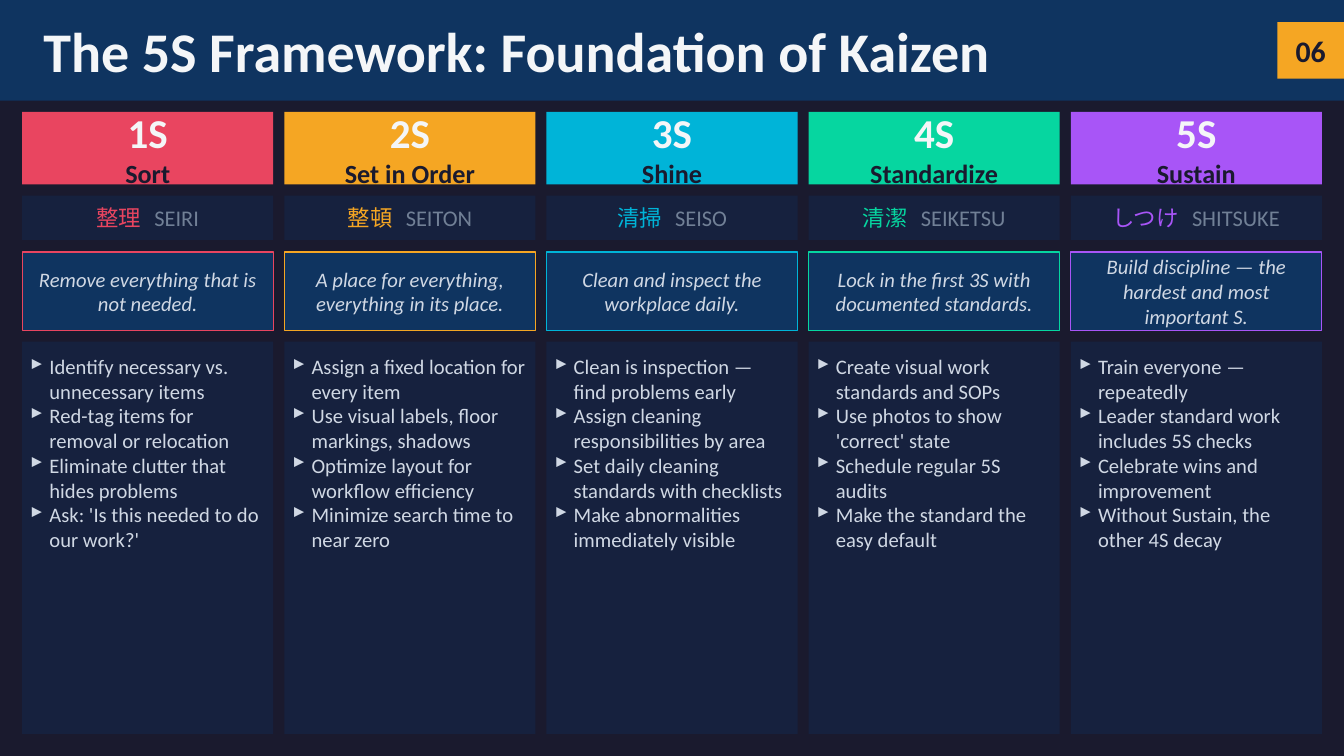
from lxml.etree import SubElement
from pptx import Presentation
from pptx.dml.color import RGBColor
from pptx.enum.shapes import MSO_SHAPE as SHAPE
from pptx.enum.text import MSO_ANCHOR as ANCHOR, MSO_AUTO_SIZE as AUTO, PP_ALIGN as ALIGN
from pptx.oxml.ns import qn
from pptx.util import Inches, Pt

COLORS = {
    "night": "1A1A2E", "navy": "0F3460", "panel": "16213E",
    "white": "F4F6F8", "text": "D0D8E4", "muted": "718096",
    "red": "E94560", "amber": "F5A623", "cyan": "00B4D8",
    "green": "06D6A0", "purple": "A855F7",
}
FORMATS = {
    "title": {"size": Pt(40), "bold": True},
    "badge": {"size": Pt(21.3), "bold": True},
    "code": {"size": Pt(29.3), "bold": True},
    "name": {"size": Pt(18.7), "bold": True},
    "japanese": {"size": Pt(16)},
    "motto": {"size": Pt(14.7), "italic": True},
    "action": {"size": Pt(14.7)},
}
SLIDE_W, SLIDE_H = 13.33, 7.5
MARGIN, GAP = 0.22, 0.11
HEADER_H = 1
CARD_INSETS = {"margin_left": 0.08, "margin_right": 0.08}
LIST_INSETS = {**CARD_INSETS, "margin_top": 0.12}

PILLARS = [
    ("Sort", "整理", "SEIRI", "red", "Remove everything that is not needed.",
     ["Identify necessary vs. unnecessary items",
      "Red-tag items for removal or relocation",
      "Eliminate clutter that hides problems",
      "Ask: 'Is this needed to do our work?'"]),
    ("Set in Order", "整頓", "SEITON", "amber",
     "A place for everything, everything in its place.",
     ["Assign a fixed location for every item",
      "Use visual labels, floor markings, shadows",
      "Optimize layout for workflow efficiency",
      "Minimize search time to near zero"]),
    ("Shine", "清掃", "SEISO", "cyan", "Clean and inspect the workplace daily.",
     ["Clean is inspection — find problems early",
      "Assign cleaning responsibilities by area",
      "Set daily cleaning standards with checklists",
      "Make abnormalities immediately visible"]),
    ("Standardize", "清潔", "SEIKETSU", "green",
     "Lock in the first 3S with documented standards.",
     ["Create visual work standards and SOPs",
      "Use photos to show 'correct' state",
      "Schedule regular 5S audits",
      "Make the standard the easy default"]),
    ("Sustain", "しつけ", "SHITSUKE", "purple",
     "Build discipline — the hardest and most important S.",
     ["Train everyone — repeatedly",
      "Leader standard work includes 5S checks",
      "Celebrate wins and improvement",
      "Without Sustain, the other 4S decay"]),
]


def rgb(color):
    return RGBColor.from_string(COLORS[color])


def add_box(slide, x, y, w, h, fill, line=None, insets=None):
    s = slide.shapes.add_shape(SHAPE.RECTANGLE, Inches(x), Inches(y), Inches(w), Inches(h))
    s.shadow.inherit = False
    s.fill.solid()
    s.fill.fore_color.rgb = rgb(fill)
    if line:
        s.line.color.rgb = rgb(line)
        s.line.width = Pt(0.75)
    else:
        s.line.fill.background()
    tf = s.text_frame
    tf.word_wrap = True
    tf.vertical_anchor = ANCHOR.MIDDLE
    for side, inset in (insets or {}).items():
        setattr(tf, side, Inches(inset))
    return s


def add_run(p, text, style, color):
    r = p.add_run()
    r.text = text
    r.font.name = "Calibri"
    r.font.color.rgb = rgb(color)
    for key, value in FORMATS[style].items():
        setattr(r.font, key, value)
    return r


def add_lines(tf, lines, align=ALIGN.CENTER):
    """Write one paragraph per (text, style, color) line."""
    for i, line in enumerate(lines):
        p = tf.paragraphs[0] if i == 0 else tf.add_paragraph()
        p.alignment = align
        add_run(p, *line)


def add_bullet(p):
    pPr = p._p.get_or_add_pPr()
    pPr.set("marL", str(Inches(0.19)))
    pPr.set("indent", str(-Inches(0.19)))
    SubElement(pPr, qn("a:buChar")).set("char", "▸")


def add_header(slide, title, number, x, y, w, h):
    add_box(slide, x, y, w, h, "navy")
    s = slide.shapes.title
    slide.shapes._spTree.append(s._element)  # bring the title in front of its bar
    s.left, s.top = Inches(x + 0.33), Inches(y + 0.11)
    s.width, s.height = Inches(11.11), Inches(h - 0.22)
    tf = s.text_frame
    tf.word_wrap = True
    tf.auto_size = AUTO.NONE
    tf.vertical_anchor = ANCHOR.MIDDLE
    add_lines(tf, [(title, "title", "white")], ALIGN.LEFT)
    badge = add_box(slide, x + w - 0.66, y + 0.22, 0.66, 0.56, "amber")
    add_lines(badge.text_frame, [(number, "badge", "night")])


def add_pillar(slide, code, pillar, x, y, w, h):
    name, japanese, romaji, accent, motto, actions = pillar

    head = add_box(slide, x, y, w, 0.72, accent)
    add_lines(head.text_frame, [(code, "code", "white"), (name, "name", "night")])

    term = add_box(slide, x, y + 0.83, w, 0.44, "panel")
    p = term.text_frame.paragraphs[0]
    p.alignment = ALIGN.CENTER
    add_run(p, japanese, "japanese", accent)
    space = add_run(p, " ", "japanese", accent)
    space.font._element.set("spc", "600")
    add_run(p, romaji, "japanese", "muted")

    card = add_box(slide, x, y + 1.39, w, 0.78, "navy", accent, CARD_INSETS)
    add_lines(card.text_frame, [(motto, "motto", "text")])

    panel = add_box(slide, x, y + 2.28, w, h - 2.28, "panel", insets=LIST_INSETS)
    tf = panel.text_frame
    tf.vertical_anchor = ANCHOR.TOP
    add_lines(tf, [(action, "action", "text") for action in actions], ALIGN.LEFT)
    for p in tf.paragraphs:
        add_bullet(p)


def add_pillars(slide, x, y, w, h):
    col_w = (w - GAP * (len(PILLARS) - 1)) / len(PILLARS)
    for i, pillar in enumerate(PILLARS):
        add_pillar(slide, f"{i + 1}S", pillar, x + i * (col_w + GAP), y, col_w, h)


def main():
    prs = Presentation()
    prs.slide_width, prs.slide_height = Inches(SLIDE_W), Inches(SLIDE_H)
    slide = prs.slides.add_slide(prs.slide_layouts[5])
    slide.background.fill.solid()
    slide.background.fill.fore_color.rgb = rgb("night")
    add_header(slide, "The 5S Framework: Foundation of Kaizen", "06", 0, 0, SLIDE_W, HEADER_H)
    top = HEADER_H + GAP
    add_pillars(slide, MARGIN, top, SLIDE_W - 2 * MARGIN, SLIDE_H - MARGIN - top)
    prs.save("out.pptx")


if __name__ == "__main__":
    main()
